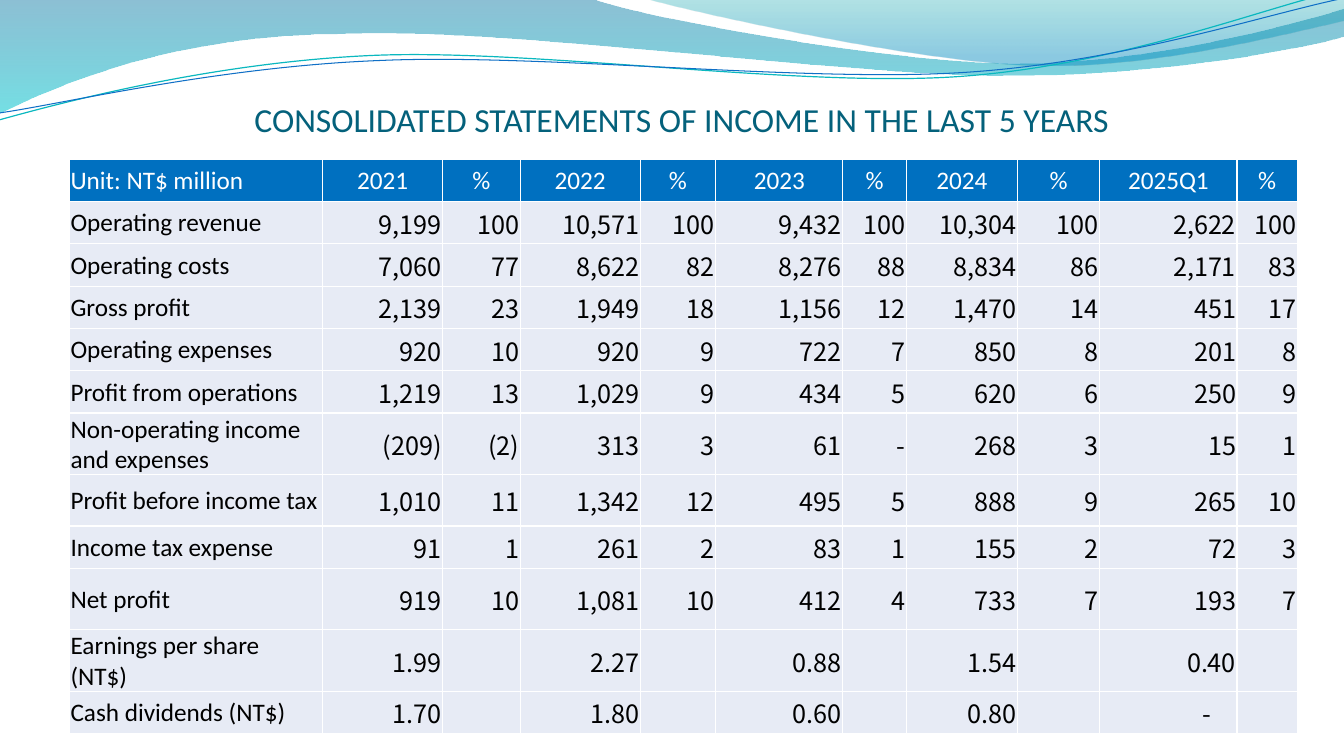
from dataclasses import dataclass

from lxml import etree
from pptx import Presentation
from pptx.dml.color import RGBColor
from pptx.enum.text import MSO_ANCHOR, PP_ALIGN
from pptx.oxml.ns import qn
from pptx.util import Inches, Pt

LEFT, CENTER, RIGHT = PP_ALIGN.LEFT, PP_ALIGN.CENTER, PP_ALIGN.RIGHT
MIDDLE, BOTTOM = MSO_ANCHOR.MIDDLE, MSO_ANCHOR.BOTTOM


@dataclass(frozen=True)
class Theme:
    title: str = "04617B"
    header_fill: str = "0070C0"
    header_text: str = "FFFFFF"
    body_fill: str = "E7EBF5"
    body_text: str = "000000"
    border: str = "FFFFFF"
    teal_line: str = "0AB8BF"
    blue_line: str = "0F6FC6"
    label_font: str = "Calibri"
    figure_font: str = "Noto Sans CJK SC"
    title_size: int = 24
    table_size: int = 18
    border_width: float = 1


THEME = Theme()

# Each band: start point, then segments of one point (straight) or three (curve).
# Gradient stops: position, colour, opacity in percent.
BANDS = [
    ((0, -0.01),
     [[(5.87, -0.01)],
      [(6.34, 0.17), (8.85, 0.63), (10.11, 0.63)],
      [(11.38, 0.63), (12.78, 0.26), (13.33, 0.09)],
      [(13.35, 0.36)],
      [(13.11, 0.44), (11.6, 0.76), (9.94, 0.75)],
      [(8.29, 0.75), (5.09, 0.28), (3.43, 0.34)],
      [(1.72, 0.35), (0.61, 0.83), (-0.01, 1.13)]],
     [(0, "0074A1", 45), (1, "00C6CF", 55)]),
    ((6.39, -0.01),
     [[(6.79, 0.11), (9.09, 0.62), (10.25, 0.65)],
      [(11.41, 0.69), (12.82, 0.32), (13.33, 0.21)],
      [(13.33, 0)]],
     [(0, "00A1A9", 30), (0.8, "008BBF", 45)]),
]
STRANDS = [
    ((-0.01, 1.19),
     [[(0.64, 1.01), (2.11, 0.62), (3.69, 0.55)],
      [(5.27, 0.48), (7.9, 0.87), (9.5, 0.76)],
      [(11.1, 0.65), (12.52, 0.08), (13.31, -0.1)]],
     THEME.teal_line, 0.85),
    ((0, 1.12),
     [[(0.63, 1.03), (2.18, 0.66), (3.78, 0.6)],
      [(5.37, 0.53), (7.96, 0.82), (9.55, 0.72)],
      [(11.15, 0.62), (12.55, 0.14), (13.34, -0.02)]],
     THEME.blue_line, 0.75),
]

COLUMN_WIDTHS = [2.51, 1.19, 0.77, 1.19, 0.75, 1.26, 0.63, 1.1, 0.82, 1.36, 0.6]
ROW_HEIGHT = 0.42
TALL_ROWS = {6: 0.61, 7: 0.51, 9: 0.61, 10: 0.61}
PERIODS = ["2021", "2022", "2023", "2024", "2025Q1"]
HEADER = ["Unit: NT$ million"] + [head for period in PERIODS for head in (period, "%")]
STATEMENT = [
    ("Operating revenue", "9,199 100 10,571 100 9,432 100 10,304 100 2,622 100"),
    ("Operating costs", "7,060 77 8,622 82 8,276 88 8,834 86 2,171 83"),
    ("Gross profit", "2,139 23 1,949 18 1,156 12 1,470 14 451 17"),
    ("Operating expenses", "920 10 920 9 722 7 850 8 201 8"),
    ("Profit from operations", "1,219 13 1,029 9 434 5 620 6 250 9"),
    ("Non-operating income and expenses", "(209) (2) 313 3 61 - 268 3 15 1"),
    ("Profit before income tax", "1,010 11 1,342 12 495 5 888 9 265 10"),
    ("Income tax expense", "91 1 261 2 83 1 155 2 72 3"),
    ("Net profit", "919 10 1,081 10 412 4 733 7 193 7"),
]
PER_SHARE = [
    ("Earnings per share (NT$)", ["1.99", "2.27", "0.88", "1.54", "0.40"]),
    ("Cash dividends (NT$)", ["1.70", "1.80", "0.60", "0.80", "-　"]),
]


def write_text(frame, text, *, size, color, font=THEME.label_font, align=LEFT):
    paragraph = frame.paragraphs[0]
    paragraph.alignment = align
    run = paragraph.add_run()
    run.text = text
    run.font.size = Pt(size)
    run.font.name = font
    run.font.color.rgb = RGBColor.from_string(color)


def draw_curve(slide, left, top, start, segments, closed):
    """Build an outline, then turn each three-point segment into a Bezier curve."""
    def place(point):
        return Inches(left + point[0]), Inches(top + point[1])

    builder = slide.shapes.build_freeform(*place(start))
    builder.add_line_segments([place(p) for seg in segments for p in seg], close=closed)
    shape = builder.convert_to_shape()
    shape.shadow.inherit = False
    steps = iter(list(shape._element.iter(qn("a:lnTo"))))
    for segment in segments:
        nodes = [next(steps) for _ in segment]
        if len(nodes) == 3:
            curve = etree.Element(qn("a:cubicBezTo"))
            nodes[0].addprevious(curve)
            for node in nodes:
                curve.append(node[0])
                node.getparent().remove(node)
    return shape


def fill_gradient(shape, stops):
    """Fill from top to bottom with translucent colours."""
    shape.fill.gradient()
    shape.fill.gradient_angle = 270
    for stop, (position, color, _) in zip(shape.fill.gradient_stops, stops):
        stop.position = position
        stop.color.rgb = RGBColor.from_string(color)
    for node, (_, _, opacity) in zip(shape._element.iter(qn("a:srgbClr")), stops):
        etree.SubElement(node, qn("a:alpha"), val=str(opacity * 1000))


def add_wave_header(slide, left, top):
    for start, segments, stops in BANDS:
        band = draw_curve(slide, left, top, start, segments, closed=True)
        fill_gradient(band, stops)
        band.line.fill.background()
    for start, segments, color, width in STRANDS:
        strand = draw_curve(slide, left, top, start, segments, closed=False)
        strand.fill.background()
        strand.line.color.rgb = RGBColor.from_string(color)
        strand.line.width = Pt(width)


def add_title(slide, left, top, width, height):
    box = slide.shapes.add_textbox(*map(Inches, (left, top, width, height)))
    frame = box.text_frame
    frame.word_wrap = True
    frame.vertical_anchor = BOTTOM
    frame.margin_left = frame.margin_right = frame.margin_bottom = 0
    frame.margin_top = Inches(0.05)
    write_text(frame, "CONSOLIDATED STATEMENTS OF INCOME IN THE LAST 5 YEARS",
               size=THEME.title_size, color=THEME.title, align=CENTER)


def style_cell(cell, fill):
    cell.vertical_anchor = MIDDLE
    cell.margin_left = cell.margin_right = cell.margin_top = Inches(0.01)
    cell.margin_bottom = 0
    properties = cell._tc.get_or_add_tcPr()
    for side in ("lnL", "lnR", "lnT", "lnB"):
        border = etree.SubElement(properties, qn(f"a:{side}"), w=str(Pt(THEME.border_width)))
        solid = etree.SubElement(border, qn("a:solidFill"))
        etree.SubElement(solid, qn("a:srgbClr"), val=THEME.border)
    cell.fill.solid()
    cell.fill.fore_color.rgb = RGBColor.from_string(fill)


def add_income_table(slide, left, top, width, height):
    rows = [HEADER] + [[label, *figures.split()] for label, figures in STATEMENT]
    rows += [[label] + [cell for amount in amounts for cell in (amount, "")]
             for label, amounts in PER_SHARE]
    table = slide.shapes.add_table(len(rows), len(HEADER),
                                   *map(Inches, (left, top, width, height))).table
    for column, column_width in zip(table.columns, COLUMN_WIDTHS):
        column.width = Inches(column_width)
    for r, row in enumerate(rows):
        table.rows[r].height = Inches(TALL_ROWS.get(r, ROW_HEIGHT))
        is_header = r == 0
        for c, text in enumerate(row):
            cell = table.cell(r, c)
            style_cell(cell, THEME.header_fill if is_header else THEME.body_fill)
            if not text:
                continue
            is_label = c == 0
            write_text(cell.text_frame, text, size=THEME.table_size,
                       color=THEME.header_text if is_header else THEME.body_text,
                       font=THEME.label_font if is_header or is_label else THEME.figure_font,
                       align=LEFT if is_label else CENTER if is_header else RIGHT)


def main():
    deck = Presentation()
    deck.slide_width, deck.slide_height = Inches(13.33), Inches(7.5)
    slide = deck.slides.add_slide(deck.slide_layouts[6])
    add_wave_header(slide, 0, 0)
    add_title(slide, 1.24, 0.68, 11.04, 0.7)
    add_income_table(slide, 0.69, 1.58, 12.19, 5.69)
    deck.save("out.pptx")


if __name__ == "__main__":
    main()
